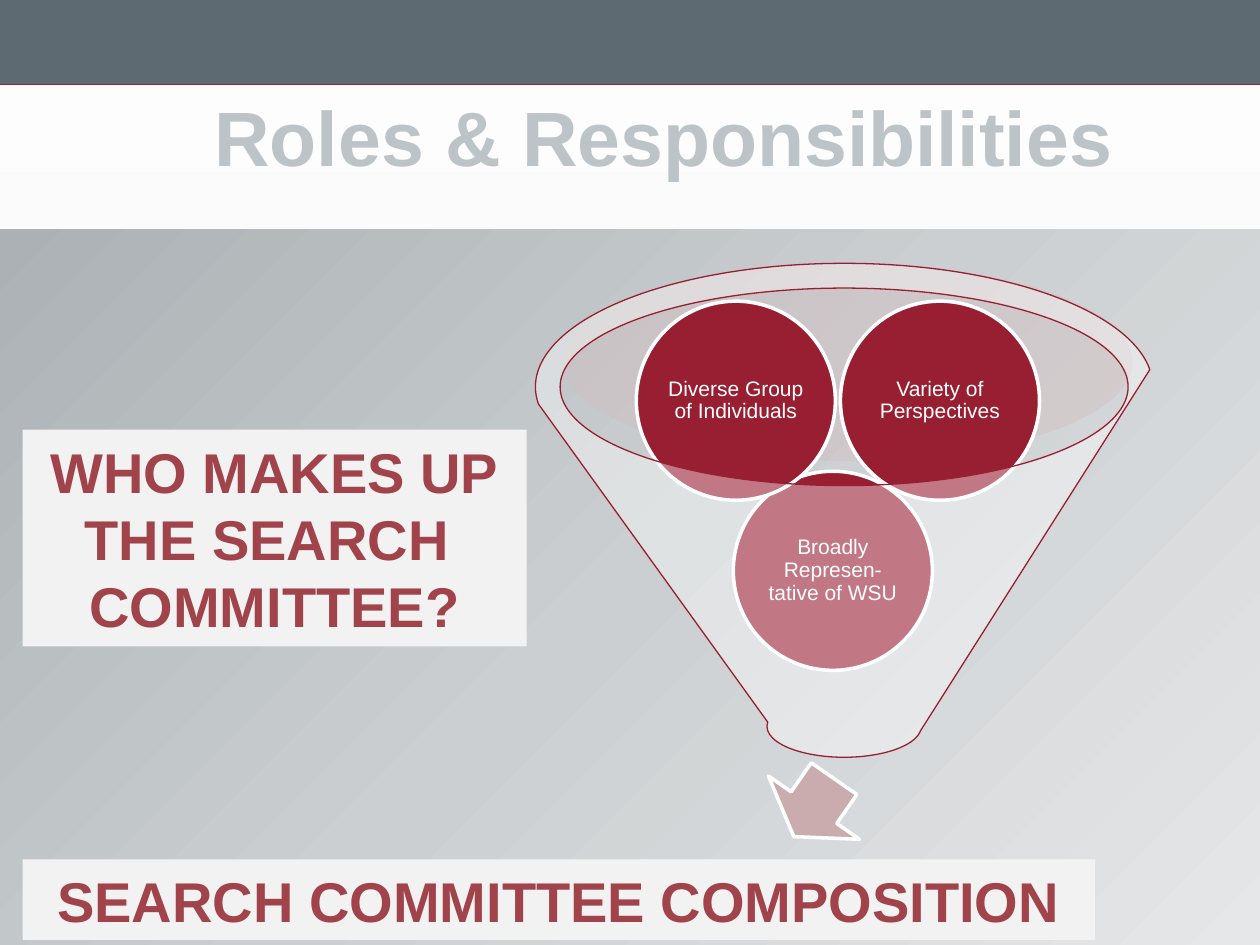
from lxml.etree import SubElement
from pptx import Presentation
from pptx.dml.color import RGBColor
from pptx.enum.shapes import MSO_CONNECTOR, MSO_SHAPE
from pptx.enum.text import MSO_ANCHOR, PP_ALIGN
from pptx.oxml import parse_xml
from pptx.oxml.ns import nsdecls, qn
from pptx.util import Inches, Pt

FONT = "Arial"
CRIMSON, GRAY, WHITE = "981E32", "5E6A71", "FFFFFF"
TITLE = "Roles & Responsibilities"
BACKDROP = [(0, "EAEAEA"), (100, WHITE)]
PANEL = [(0, "ABB1B5"), (50, "CBCFD1"), (100, "E6E7E8")]
LETTERING = [(0, "B16F73"), (49, "A0434A"), (50, "8D0A1F"), (92, "790D1F"), (100, "770D1E")]
CIRCLE_SIZE = 1.58
CIRCLES = [
    ("Broadly Represen-tative of WSU", 5.82, 3.74),
    ("Variety of Perspectives", 6.67, 2.39),
    ("Diverse Group of Individuals", 5.05, 2.39),
]
BANNERS = [
    (["WHO MAKES UP", "THE SEARCH ", "COMMITTEE?"], (0.18, 3.41, 4, 1.72)),
    (["SEARCH COMMITTEE COMPOSITION"], (0.18, 6.82, 8.51, 0.64)),
]


def paint(fill, color):
    fill.solid()
    fill.fore_color.rgb = RGBColor.from_string(color)


def paint_gradient(fill, owner, stops, angle):
    fill.gradient()
    fill.gradient_angle = angle
    stop_list = next(owner.iter(qn("a:gsLst")))
    for stop in list(stop_list):
        stop_list.remove(stop)
    for position, color in stops:
        stop = SubElement(stop_list, qn("a:gs"), pos=str(position * 1000))
        SubElement(stop, qn("a:srgbClr"), val=color)


def add_shape(page, kind, place, color=None, line=None, width=1, opacity=None):
    shape = page.shapes.add_shape(kind, *map(Inches, place))
    shape.shadow.inherit = False
    if color:
        paint(shape.fill, color)
    if opacity:
        tint = next(shape.fill._xPr.iter(qn("a:srgbClr")))
        SubElement(tint, qn("a:alpha"), val=str(opacity * 1000))
    if line:
        paint(shape.line.fill, line)
        shape.line.width = Pt(width)
    else:
        shape.line.fill.background()
    return shape


def write(shape, lines, size, color=None, bold=False, margins=(0.1, 0.05),
          anchor=MSO_ANCHOR.MIDDLE, spacing=None):
    frame = shape.text_frame
    frame.word_wrap = True
    frame.vertical_anchor = anchor
    frame.margin_left = frame.margin_right = Inches(margins[0])
    frame.margin_top = frame.margin_bottom = Inches(margins[1])
    spans = []
    for index, line in enumerate(lines):
        para = frame.add_paragraph() if index else frame.paragraphs[0]
        para.alignment = PP_ALIGN.CENTER
        para.line_spacing = spacing
        span = para.add_run()
        span.text = line
        span.font.name = FONT
        span.font.size = Pt(size)
        span.font.bold = bold
        if color:
            paint(span.font.fill, color)
        spans.append(span)
    return spans


def add_title(page):
    title = page.shapes.title
    title.left, title.top, title.width, title.height = map(Inches, (0.54, 0.65, 9.46, 0.84))
    span = write(title, [TITLE], 44, "BDC4C8", True, (0.5, 0.05), MSO_ANCHOR.BOTTOM)[0]
    outline = parse_xml(
        f'<a:ln {nsdecls("a")} w="{Pt(1.75)}"><a:solidFill>'
        f'<a:srgbClr val="{GRAY}"/></a:solidFill></a:ln>'
    )
    span.font._element.insert(0, outline)


def add_rule(page):
    rule = page.shapes.add_connector(
        MSO_CONNECTOR.STRAIGHT, 0, Inches(0.67), Inches(10), Inches(0.67))
    paint(rule.line.fill, CRIMSON)
    rule.line.width = Pt(1)
    SubElement(rule._element.spPr, qn("a:effectLst"))


def add_funnel(page):
    add_shape(page, MSO_SHAPE.OVAL, (4.47, 2.09, 4.52, 1.57), "D4BDBF", opacity=40)
    arrow = add_shape(page, MSO_SHAPE.DOWN_ARROW, (6.02, 6.13, 0.88, 0.56), "CAACAE", WHITE, 2)
    arrow.rotation = 34.8
    for label, left, top in CIRCLES:
        place = (left, top, CIRCLE_SIZE, CIRCLE_SIZE)
        circle = add_shape(page, MSO_SHAPE.OVAL, place, CRIMSON, WHITE, 2)
        write(circle, [label], 12, WHITE, margins=(0.02, 0.02), spacing=0.9)
    add_shape(page, MSO_SHAPE.FUNNEL, (4.25, 2.09, 4.9, 3.92), WHITE, CRIMSON, 0.75, 40)


def main():
    deck = Presentation()
    deck.slide_width, deck.slide_height = Inches(10), Inches(7.5)
    page = deck.slides.add_slide(deck.slide_layouts[5])
    paint_gradient(page.background.fill, page.element, BACKDROP, 90)
    add_shape(page, MSO_SHAPE.RECTANGLE, (0, 0, 10, 0.67), GRAY)
    add_rule(page)
    panel = add_shape(page, MSO_SHAPE.RECTANGLE, (0, 1.82, 10, 5.68))
    paint_gradient(panel.fill, panel._element, PANEL, 315)
    add_title(page)
    add_funnel(page)
    for lines, place in BANNERS:
        banner = add_shape(page, MSO_SHAPE.RECTANGLE, place, "F2F2F2")
        for span in write(banner, lines, 32, bold=True):
            paint_gradient(span.font.fill, span.font._element, LETTERING, 270)
    deck.save("out.pptx")


if __name__ == "__main__":
    main()
